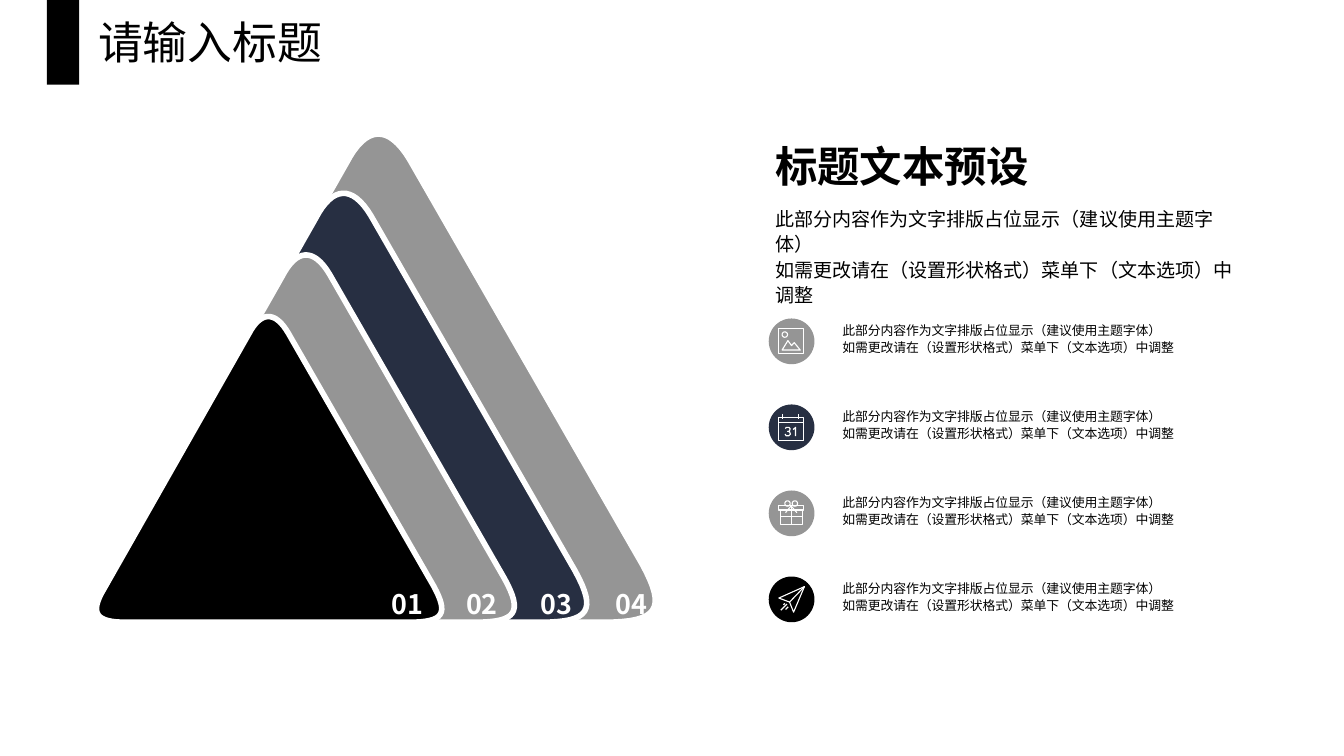
import math
from lxml import etree
from pptx import Presentation
from pptx import util as u
from pptx.dml.color import RGBColor
from pptx.enum import shapes, text
from pptx.oxml.ns import qn

FONT = "Noto Sans CJK SC"
INK = {"black": "000000", "navy": "272F42", "gray": "959595", "white": "FFFFFF"}
BODY = "此部分内容作为文字排版占位显示（建议使用主题字体）\v如需更改请在（设置形状格式）菜单下（文本选项）中调整"

# Triangle corners: start point, two control points, end point
CORNERS = [
    [(0.44, 3.71), (0.09, 3.71), (0, 3.61), (0.19, 3.3)],
    [(1.9, 0.29), (2.04, 0.02), (2.21, 0), (2.37, 0.27)],
    [(4.1, 3.28), (4.28, 3.61), (4.22, 3.71), (3.81, 3.71)],
]
BASE = 4.63
TIERS = [
    ("04", 0.68, 4.28, "gray"),
    ("03", 0.68, 3.76, "navy"),
    ("02", 0.67, 3.22, "gray"),
    ("01", 0.66, 2.68, "black"),
]


def box(x, y, w, h):
    """Strokes of a rectangle."""
    return [(x, y), (x + w, y), (x + w, y + h), (x, y + h), (x, y)]


def ring(x, y, r):
    """Strokes of a circle."""
    turns = [math.tau * i / 16 for i in range(17)]
    return [(x + r * math.cos(t), y + r * math.sin(t)) for t in turns]


# Icon strokes on a grid of 20 units, 0.01 inch each
PHOTO = [box(0.5, 0.5, 18.5, 18.5), ring(5, 5, 2),
         [(3, 16.5), (7.3, 9.5), (10, 13.2), (12, 11), (16.5, 16.5), (3, 16.5)]]
DATE = [box(0.5, 2.5, 18.5, 17), [(0.5, 6.5), (19, 6.5)],
        [(3.5, 0), (3.5, 4)], [(15.5, 0), (15.5, 4)],
        [(5.5, 11), (6, 10), (8, 10), (9, 11), (8.5, 12.8), (7, 13),
         (8.5, 13.3), (9.2, 15), (8, 16.3), (6, 16.3), (5.2, 15)],
        [(11.2, 11.7), (13, 10), (13, 16.5)]]
GIFT = [box(0.5, 4.5, 18.5, 3), box(1.5, 7.5, 16.5, 11),
        [(9.7, 4.5), (9.7, 18.5)], [(1.5, 12.5), (18, 12.5)],
        ring(7, 2.7, 2), ring(12.5, 2.7, 2),
        [(5.5, 9.5), (9.7, 4.5), (14, 9.5)]]
PLANE = [[(0.5, 9), (19.5, 0.5), (11.5, 19.5), (8.5, 12), (0.5, 9)],
         [(8.5, 12), (19.5, 0.5)], [(2, 18), (6.5, 13.5)],
         [(5.5, 17.5), (7.5, 15.5)], [(4, 14), (5, 13)]]
ROWS = [(PHOTO, "gray"), (DATE, "navy"), (GIFT, "gray"), (PLANE, "black")]


def rgb(ink):
    return RGBColor.from_string(INK[ink])


def place(item, x, y, w, h):
    item.left, item.top = u.Inches(x), u.Inches(y)
    item.width, item.height = u.Inches(w), u.Inches(h)


def write(item, words, size, ink="black", bold=False, space=None):
    frame = item.text_frame
    frame.text = words
    frame.word_wrap = True
    para = frame.paragraphs[0]
    para.line_spacing = space
    for run in para.runs:
        font = run.font
        font.name, font.size, font.bold = FONT, u.Pt(size), bold
        font.color.rgb = rgb(ink)
        etree.SubElement(font._element, qn("a:ea"), typeface=FONT)
    for gap in para._p.findall(qn("a:br")):
        etree.SubElement(gap, qn("a:rPr"), sz=str(round(size * 100)))


def label(slide, spot, words, size, **style):
    item = slide.shapes.add_textbox(*map(u.Inches, spot))
    write(item, words, size, **style)
    return item


def solid(slide, kind, spot, ink):
    item = slide.shapes.add_shape(kind, *map(u.Inches, spot))
    item.shadow.inherit = False
    item.fill.solid()
    item.fill.fore_color.rgb = rgb(ink)
    item.line.fill.background()


def sketch(slide, x, y, unit, paths, width, ink=None):
    """Draw paths as one white-lined freeform, filled if ink is given."""
    scaled = [[(u.Inches(x + px * unit), u.Inches(y + py * unit))
               for px, py in path] for path in paths]
    pen = slide.shapes.build_freeform(*scaled[0][0])
    for i, path in enumerate(scaled):
        if i:
            pen.move_to(*path[0])
        pen.add_line_segments(path[1:], close=ink is not None)
    item = pen.convert_to_shape()
    item.shadow.inherit = False
    item.line.color.rgb = rgb("white")
    item.line.width = u.Pt(width)
    if ink:
        item.fill.solid()
        item.fill.fore_color.rgb = rgb(ink)
    else:
        item.fill.background()


def bend(a, b, c, d, steps=16):
    """Points along a cubic curve."""
    for i in range(steps + 1):
        t = i / steps
        s = 1 - t
        yield tuple(s**3 * p + 3 * s * s * t * q + 3 * s * t * t * r + t**3 * e
                    for p, q, r, e in zip(a, b, c, d))


def main():
    deck = Presentation()
    deck.slide_width = u.Inches(10)
    deck.slide_height = deck.slide_width * 9 // 16
    slide = deck.slides.add_slide(deck.slide_layouts[5])

    edge = [dot for corner in CORNERS for dot in bend(*corner)]
    for i, (mark, x, wide, ink) in enumerate(TIERS):
        unit = wide / 4.28
        sketch(slide, x, BASE - 3.71 * unit, unit, [edge], 3, ink)
        label(slide, (4.48 - 0.555 * i, 4.32, 0.57, 0.29), mark, 14.4,
              ink="white", bold=True)

    head = label(slide, (5.67, 0.99, 3.69, 0.41), "标题文本预设", 22.7, bold=True)
    head.text_frame.word_wrap = False
    label(slide, (5.67, 1.48, 3.69, 0.7), BODY, 10.2, space=1.1)
    for i, (icon, ink) in enumerate(ROWS):
        y = 2.37 + 0.64 * i
        solid(slide, shapes.MSO_SHAPE.OVAL, (5.72, y, 0.34, 0.34), ink)
        label(slide, (6.17, y - 0.03, 3.24, 0.38), BODY, 6.9, space=1.1)
        sketch(slide, 5.79, y + 0.07, 0.01, icon, 0.6)

    title = slide.shapes.title
    place(title, 0.63, 0.06, 2.01, 0.5)
    write(title, "请输入标题", 24)
    title.text_frame.vertical_anchor = text.MSO_ANCHOR.MIDDLE
    title.text_frame.paragraphs[0].alignment = text.PP_ALIGN.JUSTIFY
    solid(slide, shapes.MSO_SHAPE.RECTANGLE, (0.35, 0, 0.24, 0.63), "black")
    deck.save("out.pptx")


if __name__ == "__main__":
    main()
